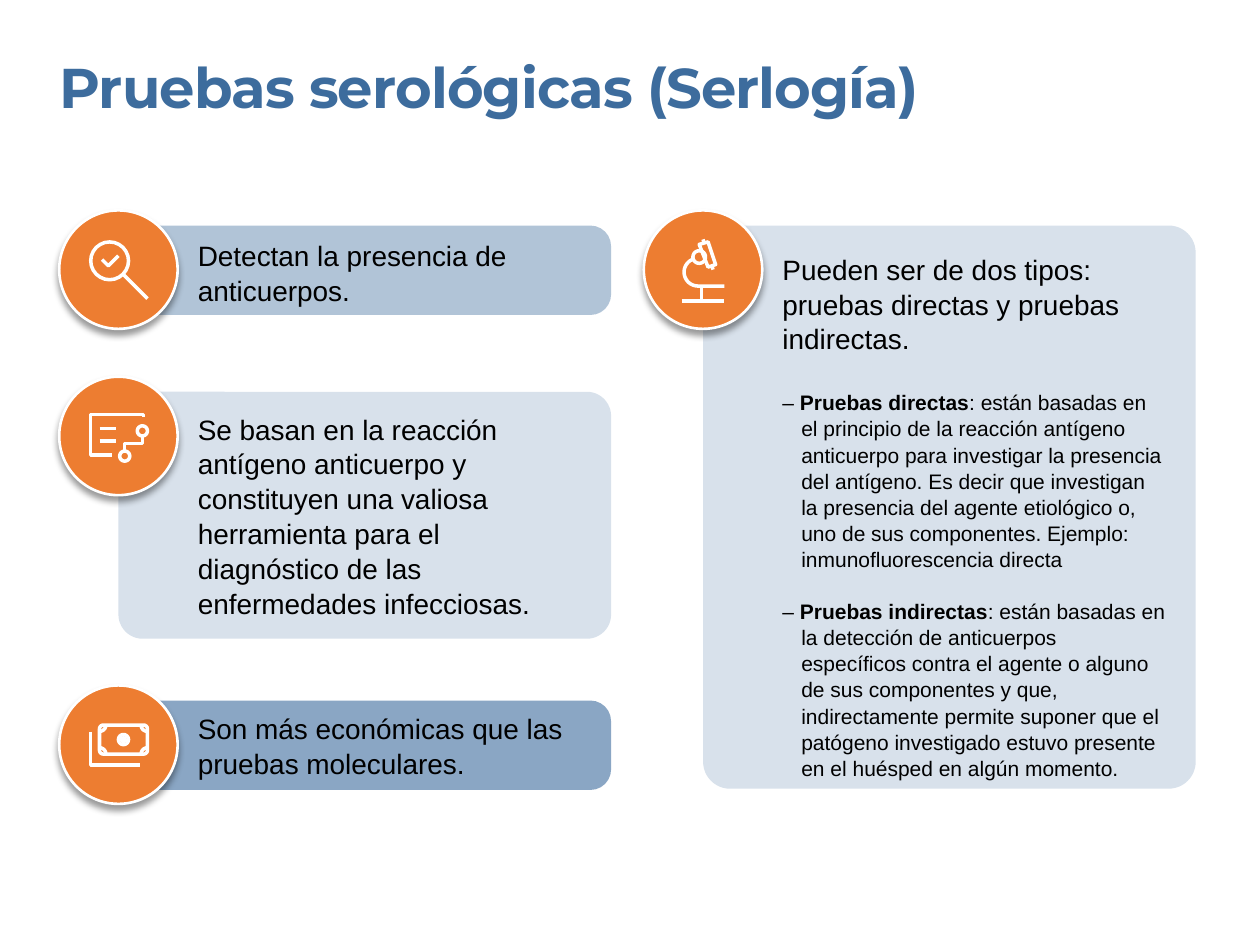
from math import cos, radians, sin

from lxml import etree
from pptx import Presentation, util as u
from pptx.dml.color import RGBColor
from pptx.enum import shapes, text
from pptx.oxml.ns import qn

THEME = dict(
    blue="3D6C9D", orange="ED7D31", white="FFFFFF", black="000000",
    title_font="Montserrat", body_font="Arial",
    title_size=32, body_size=16, detail_size=12,
)
TITLE = "Pruebas serológicas (Serlogía)"
DETAILS = [
    (19, "Pruebas directas",
     ": están basadas en el principio de la reacción antígeno anticuerpo para "
     "investigar la presencia del antígeno. Es decir que investigan la presencia del "
     "agente etiológico o, uno de sus componentes. Ejemplo: inmunofluorescencia directa"),
    (14.4, "Pruebas indirectas",
     ": están basadas en la detección de anticuerpos específicos contra el agente o "
     "alguno de sus componentes y que, indirectamente permite suponer que el patógeno "
     "investigado estuvo presente en el huésped en algún momento."),
]


def arc(x, y, radius, start=0, end=360):
    steps = 24
    angles = [radians(start + (end - start) * i / steps) for i in range(steps + 1)]
    return [(x + radius * cos(a), y + radius * sin(a)) for a in angles]


def banknote():
    half_w, half_h, corner = 0.19, 0.115, 0.03
    outline, notches = [], []
    for sx, sy, start in ((1, 1, 0), (-1, 1, 90), (-1, -1, 180), (1, -1, 270)):
        x, y = 0.04 + sx * half_w, -0.04 + sy * half_h
        outline += arc(x - sx * corner, y - sy * corner, corner, start, start + 90)
        notches.append(arc(x, y, 0.05, start + 180, start + 270))
    outline.append(outline[0])
    rear_note = [(-0.22, -0.1), (-0.22, 0.16), (0.17, 0.16)]
    coin = [arc(0.04, -0.04, radius) for radius in (0.04, 0.014)]
    return [outline, *notches, rear_note, *coin]


# Strokes of each icon, in inches from the centre of its disc
ICONS = {
    "magnifier": [
        arc(-0.07, -0.07, 0.15),
        [(0.04, 0.04), (0.23, 0.23)],
        [(-0.13, -0.08), (-0.08, -0.03), (0, -0.11)],
    ],
    "circuit": [
        [(0.2, -0.15), (0.2, -0.17), (-0.22, -0.17), (-0.22, 0.15), (-0.05, 0.15)],
        [(-0.15, -0.06), (-0.02, -0.06)],
        [(-0.15, 0.04), (-0.02, 0.04)],
        arc(0.05, 0.16, 0.04),
        arc(0.19, -0.04, 0.04),
        [(0.05, 0.11), (0.05, 0.06), (0.19, 0.06), (0.19, 0)],
    ],
    "banknote": banknote(),
    "microscope": [
        [(-0.17, 0.25), (0.17, 0.25)],
        [(-0.01, 0.13), (-0.01, 0.25)],
        [(0.17, 0.13)] + arc(-0.04, 0.02, 0.11, 90, 247),
        arc(-0.03, -0.1, 0.05),
        [(-0.03, -0.2), (0.04, -0.22), (0.1, -0.04), (0.04, -0.02), (-0.03, -0.2)],
        [(0.01, -0.21), (0, -0.24)],
        [(0.07, -0.03), (0.08, 0)],
    ],
}

# icon, disc left, disc top, card height, corner, opacity %, text top, text height, message
CARDS = [
    ("microscope", 5.11, 1.67, 4.47, 0.055, 20, 1.99, 4.11,
     "Pueden ser de dos tipos: pruebas directas y pruebas indirectas."),
    ("magnifier", 0.47, 1.67, 0.71, 0.231, 40, 1.88, 0.54,
     "Detectan la presencia de anticuerpos."),
    ("banknote", 0.47, 5.44, 0.71, 0.231, 60, 5.64, 0.54,
     "Son más económicas que las pruebas moleculares."),
    ("circuit", 0.47, 2.99, 1.96, 0.098, 20, 3.26, 1.62,
     "Se basan en la reacción antígeno anticuerpo y constituyen una valiosa "
     "herramienta para el diagnóstico de las enfermedades infecciosas."),
]
DISC, CARD_WIDTH = 0.94, 3.91


def color(name):
    return RGBColor.from_string(THEME[name])


def add_child(parent, tag, **attributes):
    return etree.SubElement(parent, qn(tag), {k: str(v) for k, v in attributes.items()})


def add_preset(slide, preset, box, fill):
    shape = slide.shapes.add_shape(preset, *map(u.Inches, box))
    shape.shadow.inherit = False
    shape.fill.solid()
    shape.fill.fore_color.rgb = color(fill)
    shape.line.fill.background()
    return shape


def add_frame(slide, box):
    frame = slide.shapes.add_textbox(*map(u.Inches, box)).text_frame
    frame.word_wrap = True
    frame.auto_size = text.MSO_AUTO_SIZE.SHAPE_TO_FIT_TEXT
    frame.margin_left = frame.margin_right = frame.margin_top = frame.margin_bottom = 0
    return frame


def write(paragraph, words, size="body_size", font="body_font", ink="black",
          bold=False, spacing=None):
    run = paragraph.add_run()
    run.text = words
    run.font.size = u.Pt(THEME[size])
    run.font.name = THEME[font]
    run.font.bold = bold
    run.font.color.rgb = color(ink)
    if spacing is not None:
        run.font._element.set("spc", str(spacing))


def add_card(slide, left, top, height, corner, opacity):
    card = add_preset(slide, shapes.MSO_SHAPE.ROUNDED_RECTANGLE,
                      (left, top, CARD_WIDTH, height), "blue")
    card.adjustments[0] = corner
    srgb = card.fill._xPr.find(".//" + qn("a:srgbClr"))
    add_child(srgb, "a:alpha", val=opacity * 1000)


def add_disc(slide, left, top):
    disc = add_preset(slide, shapes.MSO_SHAPE.OVAL, (left, top, DISC, DISC), "orange")
    disc.line.color.rgb = color("white")
    disc.line.width = u.Pt(1.5)
    effects = disc._element.spPr.find(qn("a:effectLst"))
    shadow = add_child(effects, "a:outerShdw", blurRad=u.Pt(4), dist=u.Pt(3),
                       dir=5400000, algn="ctr", rotWithShape=0)
    add_child(add_child(shadow, "a:srgbClr", val=THEME["black"]), "a:alpha", val=40000)


def add_icon(slide, strokes, center_x, center_y):
    placed = [[(u.Inches(center_x + x), u.Inches(center_y + y)) for x, y in stroke]
              for stroke in strokes]
    builder = slide.shapes.build_freeform(*placed[0][0])
    for i, stroke in enumerate(placed):
        if i:
            builder.move_to(*stroke[0])
        builder.add_line_segments(stroke[1:], close=False)
    icon = builder.convert_to_shape()
    icon.shadow.inherit = False
    icon.fill.background()
    icon.line.color.rgb = color("white")
    icon.line.width = u.Pt(2)


def add_details(frame):
    for gap, term, definition in DETAILS:
        paragraph = frame.add_paragraph()
        paragraph.space_before = u.Pt(gap)
        paragraph.line_spacing = 1.04
        properties = paragraph._p.get_or_add_pPr()
        properties.set("marL", str(u.Inches(0.15)))
        properties.set("indent", str(u.Inches(-0.15)))
        for words, bold in (("– ", False), (term, True), (definition, False)):
            write(paragraph, words, size="detail_size", bold=bold)


def main():
    deck = Presentation()
    deck.slide_width, deck.slide_height = u.Inches(10), u.Inches(7.5)
    slide = deck.slides.add_slide(deck.slide_layouts[6])
    heading = add_frame(slide, (0.47, 0.42, 8.55, 0.54))
    write(heading.paragraphs[0], TITLE, size="title_size", font="title_font",
          ink="blue", bold=True, spacing=-50)
    for icon, left, top, height, corner, opacity, text_top, text_height, message in CARDS:
        add_card(slide, left + DISC / 2, top + 0.12, height, corner, opacity)
        frame = add_frame(slide, (left + 1.1, text_top, 3.05, text_height))
        frame.paragraphs[0].line_spacing = 1.04
        write(frame.paragraphs[0], message)
        if icon == "microscope":
            add_details(frame)
        add_disc(slide, left, top)
        add_icon(slide, ICONS[icon], left + DISC / 2, top + DISC / 2)
    deck.save("out.pptx")


if __name__ == "__main__":
    main()
